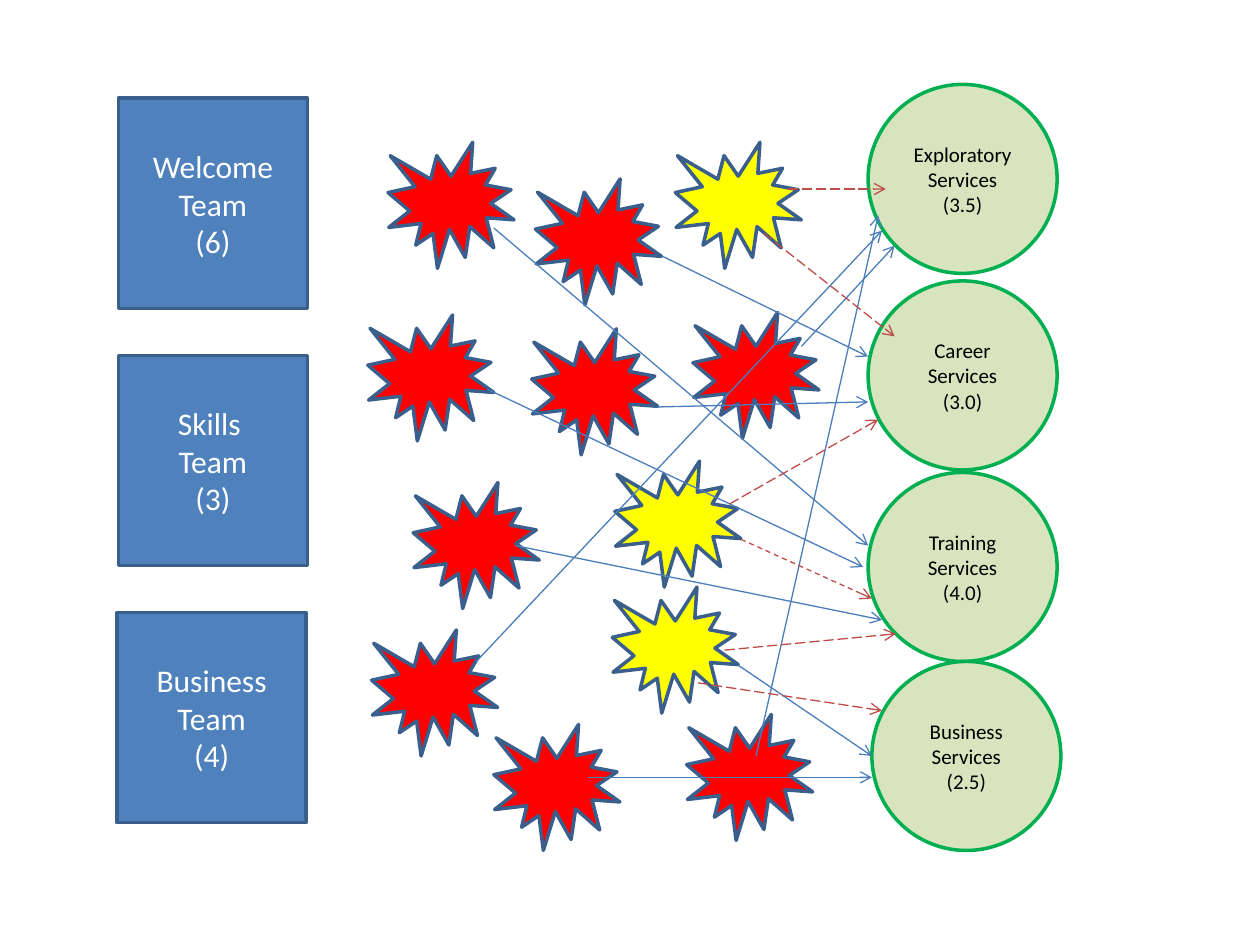
"""Build a slide linking three teams through staff bursts to four service circles."""
from dataclasses import dataclass

from lxml import etree
from pptx import Presentation
from pptx.dml.color import RGBColor
from pptx.enum import dml, shapes, text
from pptx.oxml.ns import qn
from pptx.util import Inches, Pt


@dataclass(frozen=True)
class Theme:
    font: str = "Calibri"
    team_size: float = 18
    service_size: float = 12
    outline_width: float = 2
    link_width: float = 0.75
    team_fill: str = "4F81BD"
    team_text: str = "FFFFFF"
    outline: str = "3A5F8C"
    service_fill: str = "D7E4BD"
    service_line: str = "00B050"
    service_text: str = "000000"
    red: str = "FF0000"
    yellow: str = "FFFF00"
    blue_link: str = "4B7EBC"
    red_link: str = "BF4C48"


THEME = Theme()
TEAM_SIZE = (1.5, 1.67)
SERVICE_SIZE = (1.5, 1.5)
BURST_SIZE = (1, 1)

TEAMS = [
    (0.94, 0.78, ["Welcome", "Team", "(6)"]),
    (0.94, 2.82, ["Skills ", "Team", "(3)"]),
    (0.93, 4.86, ["Business Team", "(4)"]),
]
SERVICES = [
    (6.89, 0.67, ["Exploratory Services", "(3.5)"]),
    (6.89, 3.75, ["Training", "Services", "(4.0)"]),
    (6.92, 5.25, ["Business", "Services", "(2.5)"]),
    (6.89, 2.23, ["Career", "Services", "(3.0)"]),
]
BURSTS = [
    (3.08, 1.13, THEME.red),
    (4.25, 1.42, THEME.red),
    (2.92, 2.5, THEME.red),
    (4.22, 2.61, THEME.red),
    (3.28, 3.83, THEME.red),
    (5.5, 2.48, THEME.red),
    (4.86, 4.66, THEME.yellow),
    (2.95, 5, THEME.red),
    (4.88, 3.66, THEME.yellow),
    (3.92, 5.75, THEME.red),
    (5.45, 5.67, THEME.red),
    (5.36, 1.13, THEME.yellow),
]
SOLID_LINKS = [
    (3.87, 3.09, 6.85, 4.5),
    (3.78, 5.25, 7, 1.83),
    (3.92, 1.81, 6.89, 4.33),
    (6, 6, 6.97, 1.71),
    (4.67, 6.17, 6.92, 6.17),
    (5.86, 5.28, 6.92, 6),
    (5.25, 2.03, 6.89, 2.83),
    (6.36, 2.75, 7.1, 1.95),
    (5.22, 3.23, 6.89, 3.19),
    (4.09, 4.33, 7, 4.92),
]
LONG_DASH_LINKS = [
    (5.79, 4, 6.97, 3.33),
    (6.25, 1.5, 7.03, 1.5),
    (6.06, 1.85, 7.1, 2.67),
    (5.75, 5.16, 7.11, 5.03),
    (5.54, 5.42, 7, 5.64),
]
DASH_LINKS = [(5.88, 4.28, 6.92, 4.75)]
LINK_GROUPS = [
    (SOLID_LINKS, THEME.blue_link, None),
    (LONG_DASH_LINKS, THEME.red_link, dml.MSO_LINE.LONG_DASH),
    (DASH_LINKS, THEME.red_link, dml.MSO_LINE.DASH),
]


def add_figure(slide, kind, position, size, fill, outline):
    shape = slide.shapes.add_shape(kind, *map(Inches, position + size))
    shape.shadow.inherit = False
    shape.fill.solid()
    shape.fill.fore_color.rgb = RGBColor.from_string(fill)
    shape.line.color.rgb = RGBColor.from_string(outline)
    shape.line.width = Pt(THEME.outline_width)
    return shape


def write_label(shape, lines, size, color):
    frame = shape.text_frame
    frame.word_wrap = True
    frame.vertical_anchor = text.MSO_ANCHOR.MIDDLE
    frame.text = "\n".join(lines)
    for paragraph in frame.paragraphs:
        paragraph.alignment = text.PP_ALIGN.CENTER
        paragraph.font.name = THEME.font
        paragraph.font.size = Pt(size)
        paragraph.font.color.rgb = RGBColor.from_string(color)


def add_link(slide, ends, color, dash):
    connector = slide.shapes.add_connector(
        shapes.MSO_CONNECTOR.STRAIGHT, *map(Inches, ends))
    connector.line.color.rgb = RGBColor.from_string(color)
    connector.line.width = Pt(THEME.link_width)
    if dash:
        connector.line.dash_style = dash
    properties = connector.element.spPr
    etree.SubElement(properties.find(qn("a:ln")), qn("a:tailEnd"), type="arrow")
    etree.SubElement(properties, qn("a:effectLst"))


def main():
    presentation = Presentation()
    presentation.slide_width = Inches(10)
    presentation.slide_height = Inches(7.5)
    slide = presentation.slides.add_slide(presentation.slide_layouts.get_by_name("Blank"))

    for left, top, lines in TEAMS:
        team = add_figure(slide, shapes.MSO_SHAPE.RECTANGLE, (left, top), TEAM_SIZE,
                          THEME.team_fill, THEME.outline)
        write_label(team, lines, THEME.team_size, THEME.team_text)
    for left, top, lines in SERVICES:
        service = add_figure(slide, shapes.MSO_SHAPE.OVAL, (left, top), SERVICE_SIZE,
                             THEME.service_fill, THEME.service_line)
        write_label(service, lines, THEME.service_size, THEME.service_text)
    for left, top, fill in BURSTS:
        add_figure(slide, shapes.MSO_SHAPE.EXPLOSION1, (left, top), BURST_SIZE,
                   fill, THEME.outline)
    for links, color, dash in LINK_GROUPS:
        for ends in links:
            add_link(slide, ends, color, dash)

    presentation.save("out.pptx")


if __name__ == "__main__":
    main()
